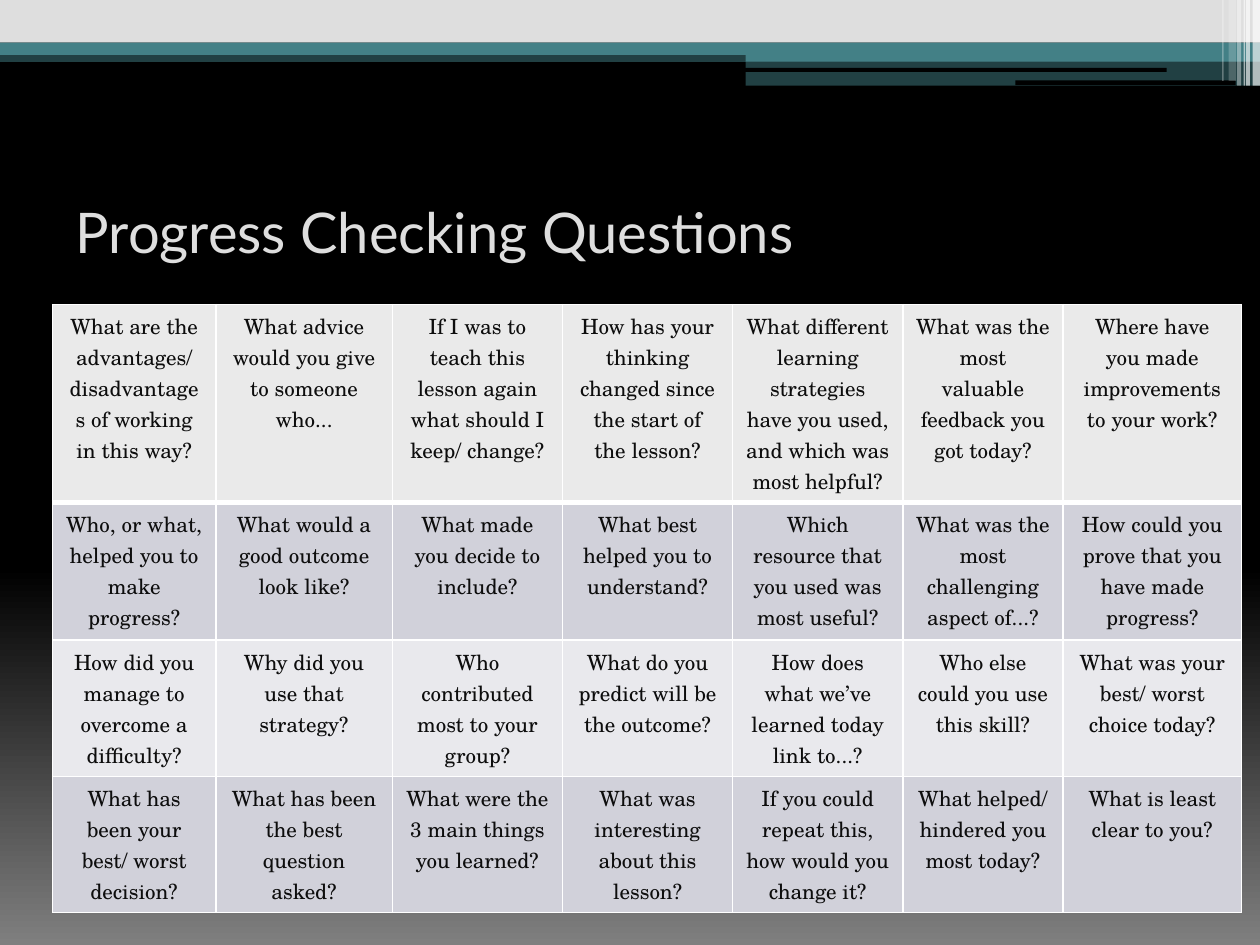
from lxml import etree
from pptx import Presentation
from pptx.dml.color import RGBColor
from pptx.enum.shapes import MSO_SHAPE
from pptx.enum.text import MSO_ANCHOR, PP_ALIGN
from pptx.oxml.ns import qn
from pptx.util import Cm, Pt

RECTANGLE = MSO_SHAPE.RECTANGLE
CENTER, LEFT = PP_ALIGN.CENTER, PP_ALIGN.LEFT
MIDDLE = MSO_ANCHOR.MIDDLE

TITLE = "Progress Checking Questions"
QUESTIONS = [
    ["What are the advantages/ disadvantages of working in this way?",
     "What advice would you give to someone who...",
     "If I was to teach this lesson again what should I keep/ change?",
     "How has your thinking changed since the start of the lesson?",
     "What different learning strategies have you used, and which was most helpful?",
     "What was the most valuable feedback you got today?",
     "Where have you made improvements to your work?"],
    ["Who, or what, helped you to make progress?",
     "What would a good outcome look like?",
     "What made you decide to include?",
     "What best helped you to understand?",
     "Which resource that you used was most useful?",
     "What was the most challenging aspect of...?",
     "How could you prove that you have made progress?"],
    ["How did you manage to overcome a difficulty?",
     "Why did you use that strategy?",
     "Who contributed most to your group?",
     "What do you predict will be the outcome?",
     "How does what we’ve learned today link to...?",
     "Who else could you use this skill?",
     "What was your best/ worst choice today?"],
    ["What has been your best/ worst decision?",
     "What has been the best question asked?",
     "What were the 3 main things you learned?",
     "What was interesting about this lesson?",
     "If you could repeat this, how would you change it?",
     "What helped/ hindered you most today?",
     "What is least clear to you?"],
]
ROW_FILLS = ["EAEAEA", "D1D1DA", "E9E9ED", "D1D1DA"]
COLUMN_WIDTHS = [3.29, 3.56, 3.43, 3.43, 3.43, 3.23, 3.6]
ROW_HEIGHTS = [3.99, 2.77, 2.74, 2.74]
TABLE_LEFT, TABLE_TOP = 1.06, 6.14

TITLE_FORMAT = {"name": "Lato", "size": Pt(32), "bold": False}
CELL_FORMAT = {"name": "TeX Gyre Schola", "size": Pt(12), "bold": False}

# left, top, width, height in cm, colour, opacity in percent
BANDS = [
    (0, 1.02, 25.4, 0.23, "438086", 50),
    (0, 0, 25.4, 0.86, "DEDEDE", 100),
    (0, 0.86, 25.4, 0.25, "438086", 100),
    (15.03, 0.99, 10.37, 0.25, "438086", 100),
    (15.03, 1.23, 10.37, 0.5, "438086", 50),
    (15.01, 1.37, 8.51, 0.08, "000000", 100),
    (20.47, 1.62, 4.44, 0.1, "000000", 100),
]
# left, width, height in cm, opacity in percent
STRIPES = [
    (25.25, 0.15, 1.73, 65),
    (25.12, 0.08, 1.73, 65),
    (25.07, 0.03, 1.73, 60),
    (24.94, 0.08, 1.73, 40),
    (24.77, 0.15, 1.63, 20),
    (24.64, 0.03, 1.63, 30),
]


def color(hex_text):
    return RGBColor.from_string(hex_text)


def set_background(slide):
    fill = slide.background.fill
    fill.gradient()
    fill.gradient_angle = 270
    for stop, position, shade in zip(fill.gradient_stops, (0.6, 1), ("000000", "7F7F7F")):
        stop.position = position
        stop.color.rgb = color(shade)


def add_bar(slide, left, top, width, height, shade, opacity):
    bar = slide.shapes.add_shape(RECTANGLE, Cm(left), Cm(top), Cm(width), Cm(height))
    bar.shadow.inherit = False
    bar.line.fill.background()
    bar.fill.solid()
    bar.fill.fore_color.rgb = color(shade)
    if opacity < 100:
        shade_element = bar.fill._xPr.find(".//" + qn("a:srgbClr"))
        etree.SubElement(shade_element, qn("a:alpha"), val=str(opacity * 1000))


def write(text_frame, text, font_format, shade, alignment):
    text_frame.text = text
    paragraph = text_frame.paragraphs[0]
    paragraph.alignment = alignment
    font = paragraph.runs[0].font
    for name, value in font_format.items():
        setattr(font, name, value)
    font.color.rgb = color(shade)


def set_borders(cell, widths):
    """Draw white borders; widths maps each side (L, R, T, B) to points."""
    properties = cell._tc.get_or_add_tcPr()
    for index, (side, width) in enumerate(widths.items()):
        line = etree.Element(qn("a:ln" + side), w=str(Pt(width)))
        fill = etree.SubElement(line, qn("a:solidFill"))
        etree.SubElement(fill, qn("a:srgbClr"), val="FFFFFF")
        properties.insert(index, line)


def add_question_table(slide):
    table = slide.shapes.add_table(
        len(QUESTIONS), len(COLUMN_WIDTHS), Cm(TABLE_LEFT), Cm(TABLE_TOP),
        Cm(sum(COLUMN_WIDTHS)), Cm(sum(ROW_HEIGHTS))).table
    table.first_row = table.horz_banding = False
    for column, width in zip(table.columns, COLUMN_WIDTHS):
        column.width = Cm(width)
    for row_index, questions in enumerate(QUESTIONS):
        table.rows[row_index].height = Cm(ROW_HEIGHTS[row_index])
        borders = {"L": 1, "R": 1,
                   "T": 3 if row_index == 1 else 1,
                   "B": 3 if row_index == 0 else 1}
        for column_index, question in enumerate(questions):
            cell = table.cell(row_index, column_index)
            write(cell.text_frame, question, CELL_FORMAT, "0D0D0D", CENTER)
            cell.fill.solid()
            cell.fill.fore_color.rgb = color(ROW_FILLS[row_index])
            set_borders(cell, borders)


def main():
    presentation = Presentation()
    presentation.slide_width, presentation.slide_height = Cm(25.4), Cm(19.05)
    slide = presentation.slides.add_slide(presentation.slide_layouts[5])
    set_background(slide)
    for band in BANDS:
        add_bar(slide, *band)
    for left, width, height, opacity in STRIPES:
        add_bar(slide, left, 0, width, height, "FFFFFF", opacity)

    title = slide.shapes.title
    title.left, title.top, title.width, title.height = Cm(1.27), Cm(3.18), Cm(22.86), Cm(2.97)
    title.text_frame.vertical_anchor = MIDDLE
    write(title.text_frame, TITLE, TITLE_FORMAT, "DEDEDE", LEFT)

    add_question_table(slide)
    presentation.save("out.pptx")


if __name__ == "__main__":
    main()
